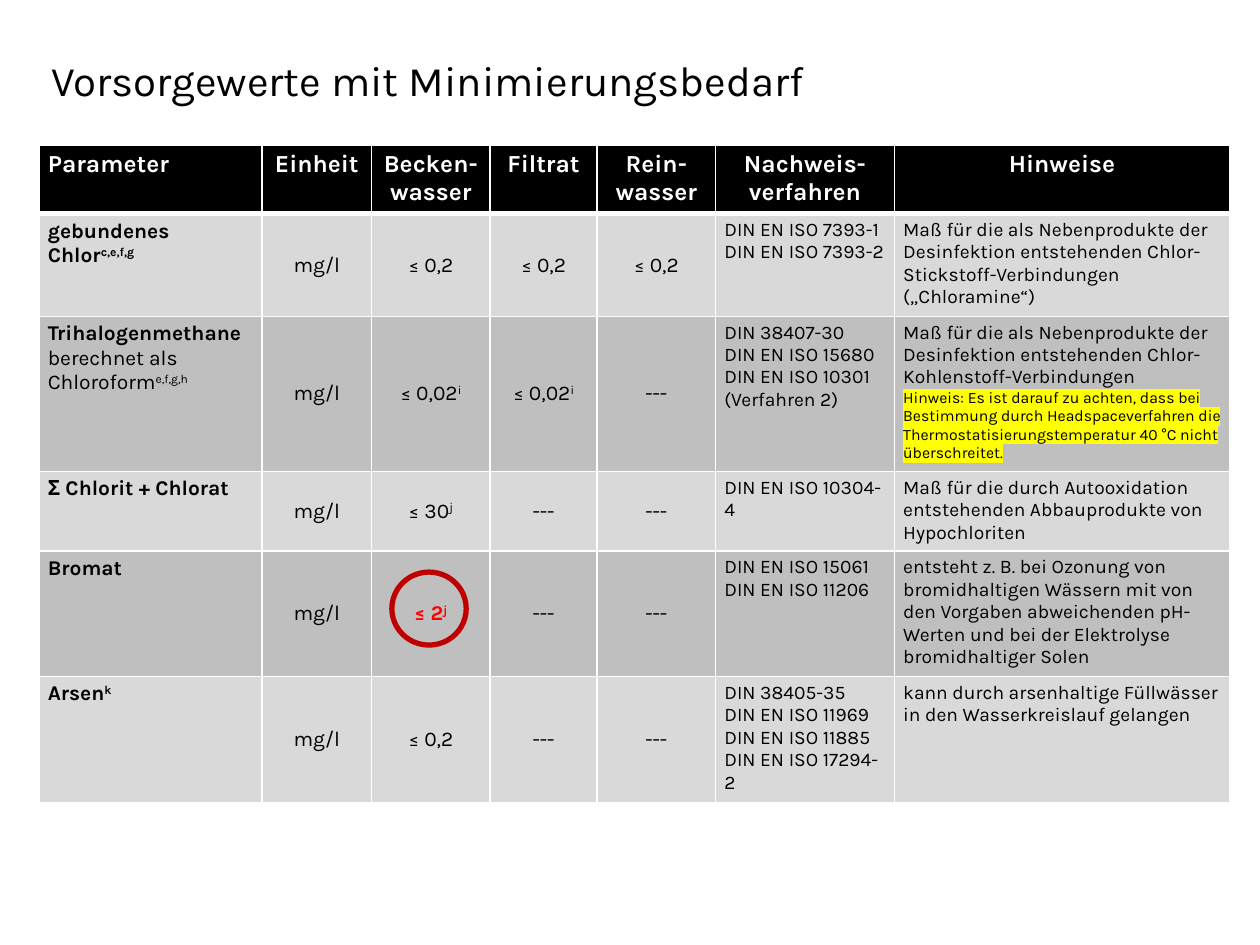
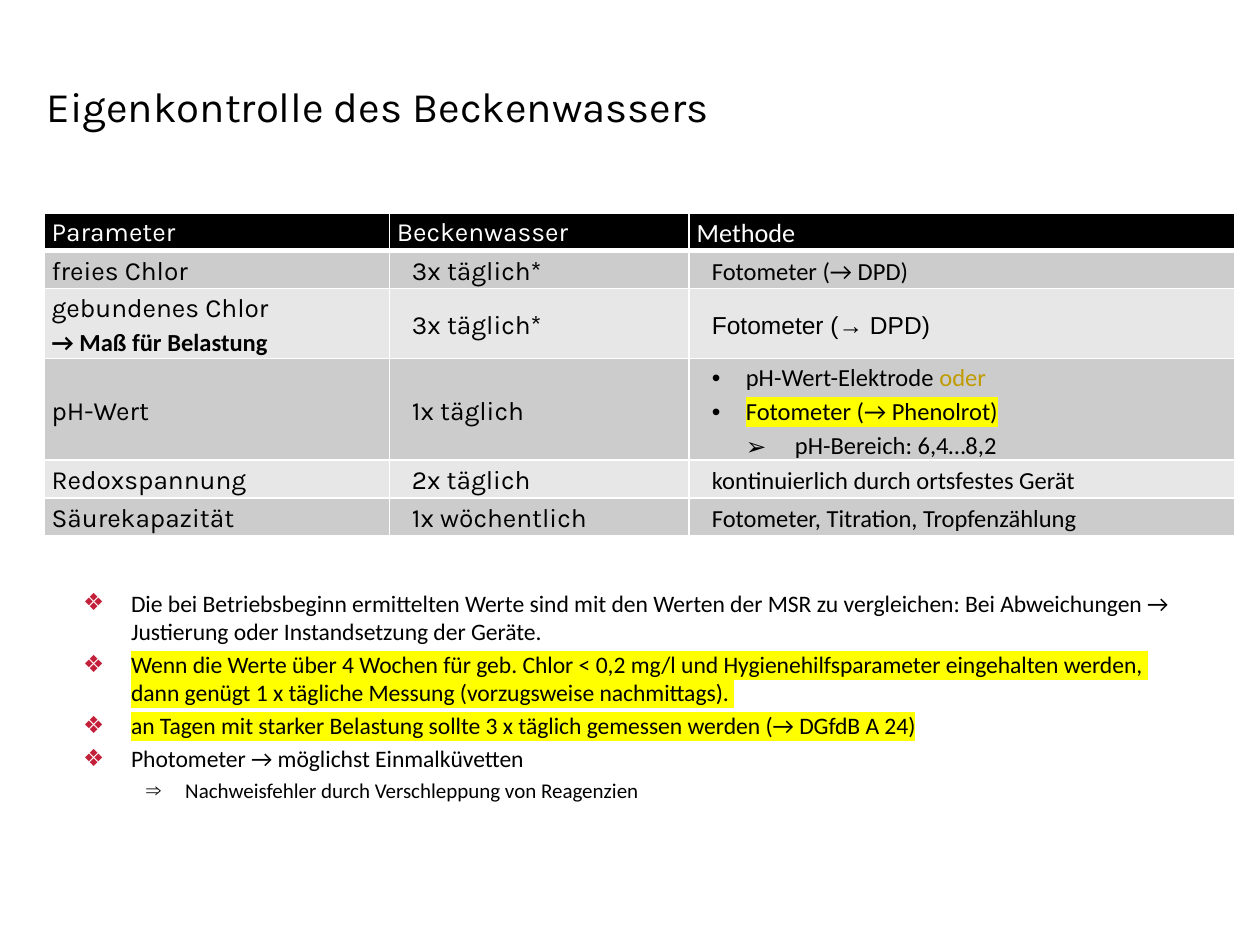
from lxml import etree
from pptx import Presentation
from pptx.dml.color import RGBColor
from pptx.enum.shapes import MSO_SHAPE
from pptx.enum.text import MSO_ANCHOR, PP_ALIGN
from pptx.oxml.ns import qn
from pptx.util import Inches, Pt

TOP, MIDDLE, BOTTOM = MSO_ANCHOR.TOP, MSO_ANCHOR.MIDDLE, MSO_ANCHOR.BOTTOM
LEFT, CENTER, JUSTIFY = PP_ALIGN.LEFT, PP_ALIGN.CENTER, PP_ALIGN.JUSTIFY
OVAL = MSO_SHAPE.OVAL

# Shared look
BLACK, WHITE, YELLOW, RED = "000000", "FFFFFF", "FFFF00", "FF0000"
RING, BULLET_RED, GOLD = "C00000", "C31F39", "C09C00"
LIMIT_BANDS = ("D9D9D9", "BFBFBF")
CONTROL_BANDS = ("CCCCCC", "E7E7E7")
KARLA = {"font": "Karla"}
CALIBRI = {"font": "Calibri", "size": 14}
MARKED = {"highlight": YELLOW}
BOLD = {"bold": True}

# Content. A cell is a list of paragraphs, a paragraph a list of (text, style)
# runs or plain text; text after ^ is superscript.
LIMITS_TITLE = "Vorsorgewerte mit Minimierungsbedarf"
LIMITS_HEADER = ["Parameter", "Einheit", "Becken-wasser", "Filtrat",
                 "Rein-wasser", "Nachweis- verfahren", "Hinweise"]
LIMITS_WIDTHS = [1.77, 0.87, 0.94, 0.85, 0.94, 1.42, 2.66]
LIMITS_HEIGHTS = [0.53, 0.78, 1.2, 0.6, 0.95, 0.95]
BY_PRODUCTS = ["Maß für die als Nebenprodukte der",
               "Desinfektion entstehenden Chlor-"]
HEADSPACE_NOTE = (
    "Hinweis: Es ist darauf zu achten, dass bei Bestimmung durch "
    "Headspaceverfahren die Thermostatisierungstemperatur 40 °C "
    "nicht überschreitet.")
LIMITS = [
    [[[("gebundenes Chlor^c,e,f,g", BOLD)]],
     ["mg/l"], ["≤ 0,2"], ["≤ 0,2"], ["≤ 0,2"],
     ["DIN EN ISO 7393-1", "DIN EN ISO 7393-2"],
     BY_PRODUCTS + ["Stickstoff-Verbindungen („Chloramine“)"]],
    [[[("Trihalogenmethane", BOLD)], "berechnet als", "Chloroform^e,f,g,h"],
     ["mg/l"], ["≤ 0,02^i"], ["≤ 0,02^i"], ["---"],
     ["DIN 38407-30", "DIN EN ISO 15680", "DIN EN ISO 10301 (Verfahren 2)"],
     BY_PRODUCTS + ["Kohlenstoff-Verbindungen",
                    [(HEADSPACE_NOTE, {"size": 9, **MARKED})]]],
    [[[("Σ Chlorit + Chlorat", BOLD)]],
     ["mg/l"], ["≤ 30^j"], ["---"], ["---"],
     ["DIN EN ISO 10304-4"],
     ["Maß für die durch Autooxidation entstehenden Abbauprodukte von "
      "Hypochloriten"]],
    [[[("Bromat", BOLD)]],
     ["mg/l"], [[("≤ 2^j", {"color": RED, **BOLD})]], ["---"], ["---"],
     ["DIN EN ISO 15061", "DIN EN ISO 11206"],
     ["entsteht z. B. bei Ozonung von bromidhaltigen Wässern mit von den "
      "Vorgaben abweichenden pH-Werten und bei der Elektrolyse "
      "bromidhaltiger Solen"]],
    [[[("Arsen^k", BOLD)]],
     ["mg/l"], ["≤ 0,2"], ["---"], ["---"],
     ["DIN 38405-35", "DIN EN ISO 11969", "DIN EN ISO 11885",
      "DIN EN ISO 17294-2"],
     ["kann durch arsenhaltige Füllwässer in den Wasserkreislauf gelangen"]],
]

CONTROL_TITLE = "Eigenkontrolle des Beckenwassers"
CONTROL_HEADER = ["Parameter", "Beckenwasser",
                  [("Methode", {"font": "Calibri"})]]
CONTROL_WIDTHS = [2.74, 2.38, 4.33]
CONTROL_HEIGHTS = [0.3, 0.3, 0.53, 0.76, 0.3, 0.3]
CONTROLS = [
    [["freies Chlor"], ["3x täglich*"], [[("Fotometer (→ DPD)", CALIBRI)]]],
    [["gebundenes Chlor", [("→ Maß für Belastung", {**CALIBRI, **BOLD})]],
     ["3x täglich*"],
     [[("Fotometer (→ DPD)", {"font": "Arial", "size": 14})]]],
    [["pH-Wert"], ["1x täglich"],
     [[("pH-Wert-Elektrode ", CALIBRI), ("oder", {**CALIBRI, "color": GOLD})],
      [("Fotometer (→ Phenolrot)", {**CALIBRI, **MARKED})],
      [("pH-Bereich: 6,4…8,2", CALIBRI)]]],
    [["Redoxspannung"], ["2x täglich"],
     [[("kontinuierlich durch ortsfestes Gerät", CALIBRI)]]],
    [["Säurekapazität"], ["1x wöchentlich"],
     [[("Fotometer, Titration, Tropfenzählung", CALIBRI)]]],
]
PH_ROW = 3
# Bullet layouts: (left margin, first-line indent, character, colour)
PH_BULLETS = [(0.39, -0.27, "•", None)] * 2 + [(0.78, -0.39, "➢", None)]
NOTES = [
    "Die bei Betriebsbeginn ermittelten Werte sind mit den Werten der MSR zu "
    "vergleichen: Bei Abweichungen → Justierung oder Instandsetzung der "
    "Geräte.",
    [("Wenn die Werte über 4 Wochen für geb. Chlor < 0,2 mg/l und "
      "Hygienehilfsparameter eingehalten werden, \n"
      "dann genügt 1 x tägliche Messung (vorzugsweise nachmittags). ", MARKED)],
    [("an Tagen mit starker Belastung sollte 3 x täglich gemessen werden "
      "(→ DGfdB A 24)", MARKED)],
    "Photometer → möglichst Einmalküvetten",
    [("Nachweisfehler durch Verschleppung von Reagenzien", {"size": 12})],
]
NOTE_BULLETS = ([(0.38, -0.38, "❖", BULLET_RED)] * 4
                + [(0.81, -0.31, "⇒", None)])


def rgb(color):
    return RGBColor.from_string(color)


def add_run(paragraph, text, style, raised):
    run = paragraph.add_run()
    run.text = text
    run.font.size = Pt(style["size"])
    run.font.bold = style.get("bold", False)
    run.font.name = style["font"]
    run.font.color.rgb = rgb(style.get("color", BLACK))
    props = run.font._element
    if raised:
        props.set("baseline", "30000")
    if "highlight" in style:
        highlight = etree.Element(qn("a:highlight"))
        etree.SubElement(highlight, qn("a:srgbClr"), val=style["highlight"])
        props.find(qn("a:solidFill")).addnext(highlight)


def indent(paragraph, margin, first_line, bullet=None, color=None):
    props = paragraph._p.get_or_add_pPr()
    props.set("marL", str(Inches(margin)))
    props.set("indent", str(Inches(first_line)))
    if color:
        bullet_color = etree.SubElement(props, qn("a:buClr"))
        etree.SubElement(bullet_color, qn("a:srgbClr"), val=color)
    if bullet:
        etree.SubElement(props, qn("a:buFont"), typeface="Arial")
        etree.SubElement(props, qn("a:buChar"), char=bullet)


def write(frame, paragraphs, base, align=LEFT, layouts=(), line_spacing=None,
          space_before=0):
    for i, content in enumerate(paragraphs):
        paragraph = frame.paragraphs[0] if i == 0 else frame.add_paragraph()
        if layouts:
            indent(paragraph, *layouts[i])
        paragraph.alignment = align
        if line_spacing:
            paragraph.line_spacing = line_spacing
        if i and space_before:
            paragraph.space_before = Pt(space_before)
        runs = [(content, {})] if isinstance(content, str) else content
        for text, style in runs:
            for line_no, line in enumerate(text.split("\n")):
                if line_no:
                    paragraph.add_line_break()
                for raised, part in enumerate(line.split("^")):
                    add_run(paragraph, part, {**base, **style}, raised)


def set_margins(target, side, vertical):
    target.margin_left = target.margin_right = Inches(side)
    target.margin_top = target.margin_bottom = Inches(vertical)


def add_text(slide, left, top, width, height):
    box = slide.shapes.add_textbox(*map(Inches, (left, top, width, height)))
    box.text_frame.word_wrap = True
    return box.text_frame


def add_title(slide, left, top, title):
    frame = add_text(slide, left, top, 8.52, 0.59)
    frame.vertical_anchor = BOTTOM
    write(frame, [title], {**KARLA, "size": 24})


def set_borders(cell, bottom):
    props = cell._tc.get_or_add_tcPr()
    widths = {"a:lnL": 1, "a:lnR": 1, "a:lnT": 1, "a:lnB": bottom}
    for position, (tag, points) in enumerate(widths.items()):
        line = etree.Element(qn(tag), w=str(Pt(points)))
        fill = etree.SubElement(line, qn("a:solidFill"))
        etree.SubElement(fill, qn("a:srgbClr"), val=WHITE)
        props.insert(position, line)


def add_grid(slide, left, top, widths, heights, bands, margins):
    """Add an empty table with a black header and alternating row fills."""
    table = slide.shapes.add_table(
        len(heights), len(widths), Inches(left), Inches(top),
        Inches(sum(widths)), Inches(sum(heights))).table
    table.first_row = table.horz_banding = False
    for column, width in zip(table.columns, widths):
        column.width = Inches(width)
    for r, height in enumerate(heights):
        table.rows[r].height = Inches(height)
        for cell in table.rows[r].cells:
            cell.fill.solid()
            cell.fill.fore_color.rgb = rgb(bands[(r - 1) % 2] if r else BLACK)
            set_margins(cell, *margins)
            set_borders(cell, bottom=1 if r else 3)
    return table


def build_limits(slide):
    add_title(slide, 0.31, 0.29, LIMITS_TITLE)
    table = add_grid(slide, 0.31, 1.15, LIMITS_WIDTHS, LIMITS_HEIGHTS,
                     LIMIT_BANDS, (0.07, 0.04))
    header_style = {**KARLA, **BOLD, "size": 14, "color": WHITE}
    for c, heading in enumerate(LIMITS_HEADER):
        write(table.cell(0, c).text_frame, [heading], header_style,
              CENTER if c else LEFT)
    for r, row in enumerate(LIMITS, 1):
        for c, paragraphs in enumerate(row):
            is_value = 1 <= c <= 4
            cell = table.cell(r, c)
            cell.vertical_anchor = MIDDLE if is_value else TOP
            write(cell.text_frame, paragraphs,
                  {**KARLA, "size": 11 if c > 4 else 12},
                  CENTER if is_value else LEFT)

    # Ring around the bromate limit
    ring = slide.shapes.add_shape(
        OVAL, Inches(3.11), Inches(4.54), Inches(0.59), Inches(0.58))
    ring.shadow.inherit = False
    ring.fill.background()
    ring.line.color.rgb = rgb(RING)
    ring.line.width = Pt(3)


def build_control(slide):
    add_title(slide, 0.27, 0.5, CONTROL_TITLE)
    table = add_grid(slide, 0.35, 1.69, CONTROL_WIDTHS, CONTROL_HEIGHTS,
                     CONTROL_BANDS, (0.06, 0))
    base = {**KARLA, "size": 15}
    for c, heading in enumerate(CONTROL_HEADER):
        write(table.cell(0, c).text_frame, [heading],
              {**base, "color": WHITE}, JUSTIFY, line_spacing=1.15)
    for r, row in enumerate(CONTROLS, 1):
        for c, paragraphs in enumerate(row):
            cell = table.cell(r, c)
            cell.vertical_anchor = MIDDLE
            layouts = [(0.12, 0)] if c else ()
            if (r, c) == (PH_ROW, 2):
                layouts = PH_BULLETS
            write(cell.text_frame, paragraphs, base,
                  LEFT if c == 2 else JUSTIFY, layouts, 1.15)

    # Notes below the table
    notes = add_text(slide, 0.59, 4.63, 9.21, 1.88)
    set_margins(notes, 0.07, 0.04)
    write(notes, NOTES, {"font": "Calibri", "size": 13.5},
          layouts=NOTE_BULLETS, space_before=2.7)


def main():
    deck = Presentation()
    deck.slide_width, deck.slide_height = Inches(10), Inches(7.5)
    for build in (build_limits, build_control):
        build(deck.slides.add_slide(deck.slide_layouts[6]))
    deck.save("out.pptx")


if __name__ == "__main__":
    main()
